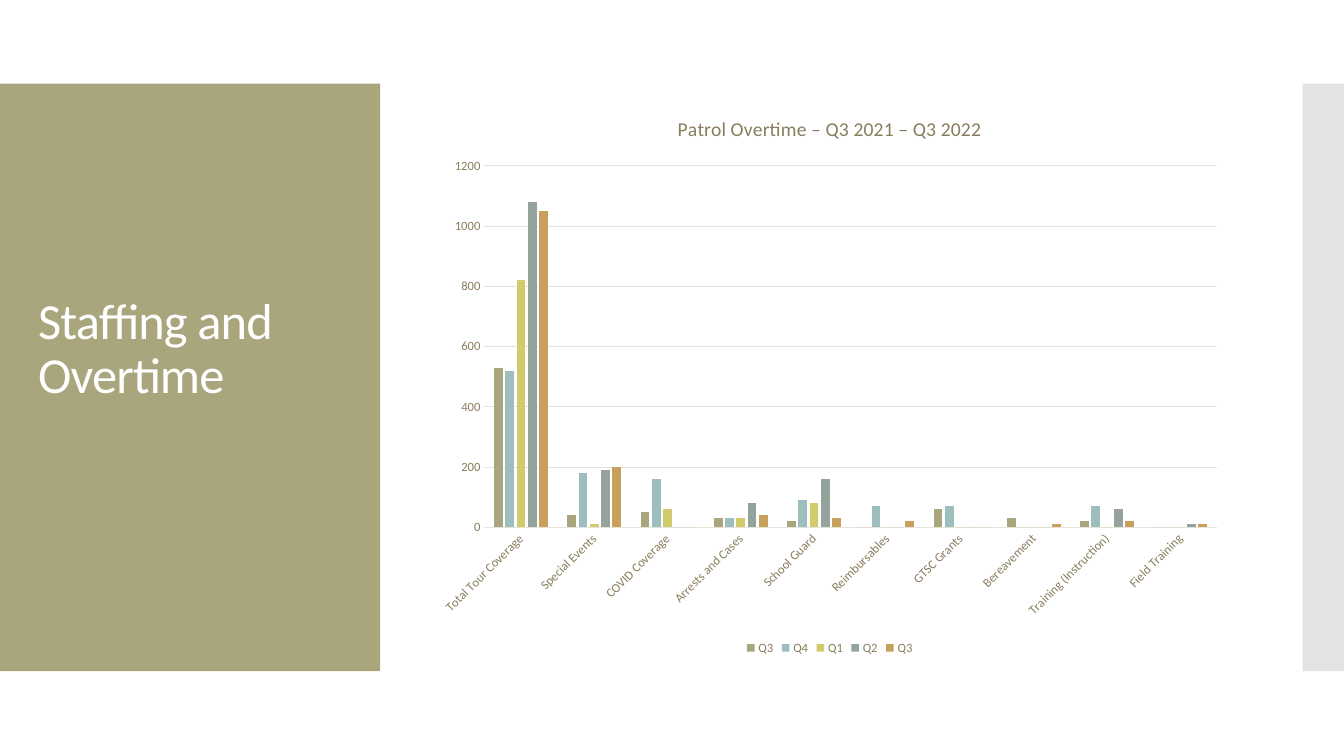
from lxml.etree import SubElement
from pptx import Presentation
from pptx.chart.data import CategoryChartData
from pptx.dml.color import RGBColor
from pptx.enum.chart import XL_CHART_TYPE, XL_LEGEND_POSITION, XL_TICK_MARK
from pptx.enum.shapes import MSO_SHAPE
from pptx.enum.text import MSO_ANCHOR
from pptx.oxml.ns import qn
from pptx.util import Inches, Pt

FONT = "Calibri"
COLORS = {
    "panel": "A9A57C",
    "strip": "C8C8C8",
    "white": "FFFFFF",
    "dark": "2F2B20",
    "label": "897D5D",
    "grid": "E5E2D9",
}
CATEGORIES = [
    "Total Tour Coverage", "Special Events", "COVID Coverage",
    "Arrests and Cases", "School Guard", "Reimbursables", "GTSC Grants",
    "Bereavement", "Training (Instruction)", "Field Training",
]
QUARTERS = [
    ("Q3", "A9A57C", [530, 40, 50, 30, 20, 0, 60, 30, 20, 0]),
    ("Q4", "9CBEBD", [520, 180, 160, 30, 90, 70, 70, 0, 70, 0]),
    ("Q1", "D2CB6C", [820, 10, 60, 30, 80, 0, 0, 0, 0, 0]),
    ("Q2", "95A39D", [1080, 190, 0, 80, 160, 0, 0, 0, 60, 10]),
    ("Q3", "C89F5D", [1050, 200, 0, 40, 30, 20, 0, 10, 20, 10]),
]


def rgb(name):
    return RGBColor.from_string(COLORS[name])


def set_font(font, size, color):
    font.name = FONT
    font.size = Pt(size)
    font.bold = False
    font.color.rgb = rgb(color)


def set_line(line, color):
    line.color.rgb = rgb(color)
    line.width = Pt(0.75)


def add_band(s, x, y, w, h, color, opacity=100):
    sp = s.shapes.add_shape(
        MSO_SHAPE.RECTANGLE, Inches(x), Inches(y), Inches(w), Inches(h))
    sp.shadow.inherit = False
    sp.fill.solid()
    sp.fill.fore_color.rgb = rgb(color)
    sp.line.fill.background()
    if opacity < 100:
        srgb = sp.fill._xPr.find(".//" + qn("a:srgbClr"))
        SubElement(srgb, qn("a:alpha")).set("val", str(opacity * 1000))


def add_title(s, x, y, w, h):
    tf = s.shapes.add_textbox(
        Inches(x), Inches(y), Inches(w), Inches(h)).text_frame
    tf.word_wrap = True
    tf.vertical_anchor = MSO_ANCHOR.MIDDLE
    tf.margin_bottom = Inches(0.59)  # lifts the title above the middle
    p = tf.paragraphs[0]
    p.line_spacing = 0.9
    r = p.add_run()
    r.text = "Staffing and Overtime"
    set_font(r.font, 36, "white")
    r.font._element.set("spc", "-60")


def add_overtime_chart(s, x, y, w, h):
    data = CategoryChartData()
    data.categories = CATEGORIES
    for name, _, hours in QUARTERS:
        data.add_series(name, hours)
    chart = s.shapes.add_chart(
        XL_CHART_TYPE.COLUMN_CLUSTERED,
        Inches(x), Inches(y), Inches(w), Inches(h), data).chart
    set_font(chart.font, 10, "dark")

    # Chart title
    chart.has_title = True
    chart.chart_title.include_in_layout = False
    r = chart.chart_title.text_frame.paragraphs[0].add_run()
    r.text = "Patrol Overtime – Q3 2021 – Q3 2022"
    set_font(r.font, 14, "label")

    # Columns
    plot = chart.plots[0]
    plot.gap_width = 219
    plot.overlap = -27
    plot.vary_by_categories = False
    for series, (_, color, _) in zip(plot.series, QUARTERS):
        series.format.fill.solid()
        series.format.fill.fore_color.rgb = RGBColor.from_string(color)
        series.invert_if_negative = False

    # Axes
    cat_axis, val_axis = chart.category_axis, chart.value_axis
    for axis in (cat_axis, val_axis):
        axis.major_tick_mark = XL_TICK_MARK.NONE
        axis.minor_tick_mark = XL_TICK_MARK.NONE
        set_font(axis.tick_labels.font, 9, "label")
    set_line(cat_axis.format.line, "grid")
    body = cat_axis._element.find(qn("c:txPr")).find(qn("a:bodyPr"))
    body.set("rot", "-2700000")
    body.set("vert", "horz")
    val_axis.minimum_scale = 0
    val_axis.maximum_scale = 1200
    val_axis.major_unit = 200
    val_axis.format.line.fill.background()
    val_axis.has_major_gridlines = True
    set_line(val_axis.major_gridlines.format.line, "grid")

    # Legend
    chart.has_legend = True
    chart.legend.position = XL_LEGEND_POSITION.BOTTOM
    chart.legend.include_in_layout = False
    set_font(chart.legend.font, 9, "label")


def main():
    prs = Presentation()
    prs.slide_width, prs.slide_height = Inches(13.33), Inches(7.5)
    s = prs.slides.add_slide(prs.slide_layouts[6])
    s.background.fill.solid()
    s.background.fill.fore_color.rgb = rgb("white")

    add_band(s, 0, 0.83, 3.77, 5.83, "panel")
    add_band(s, 12.92, 0.83, 0.41, 5.83, "strip", opacity=50)
    add_title(s, 0.28, 1.23, 3.22, 5.03)
    add_overtime_chart(s, 4.23, 0.94, 8, 5.6)
    prs.save("out.pptx")


if __name__ == "__main__":
    main()
